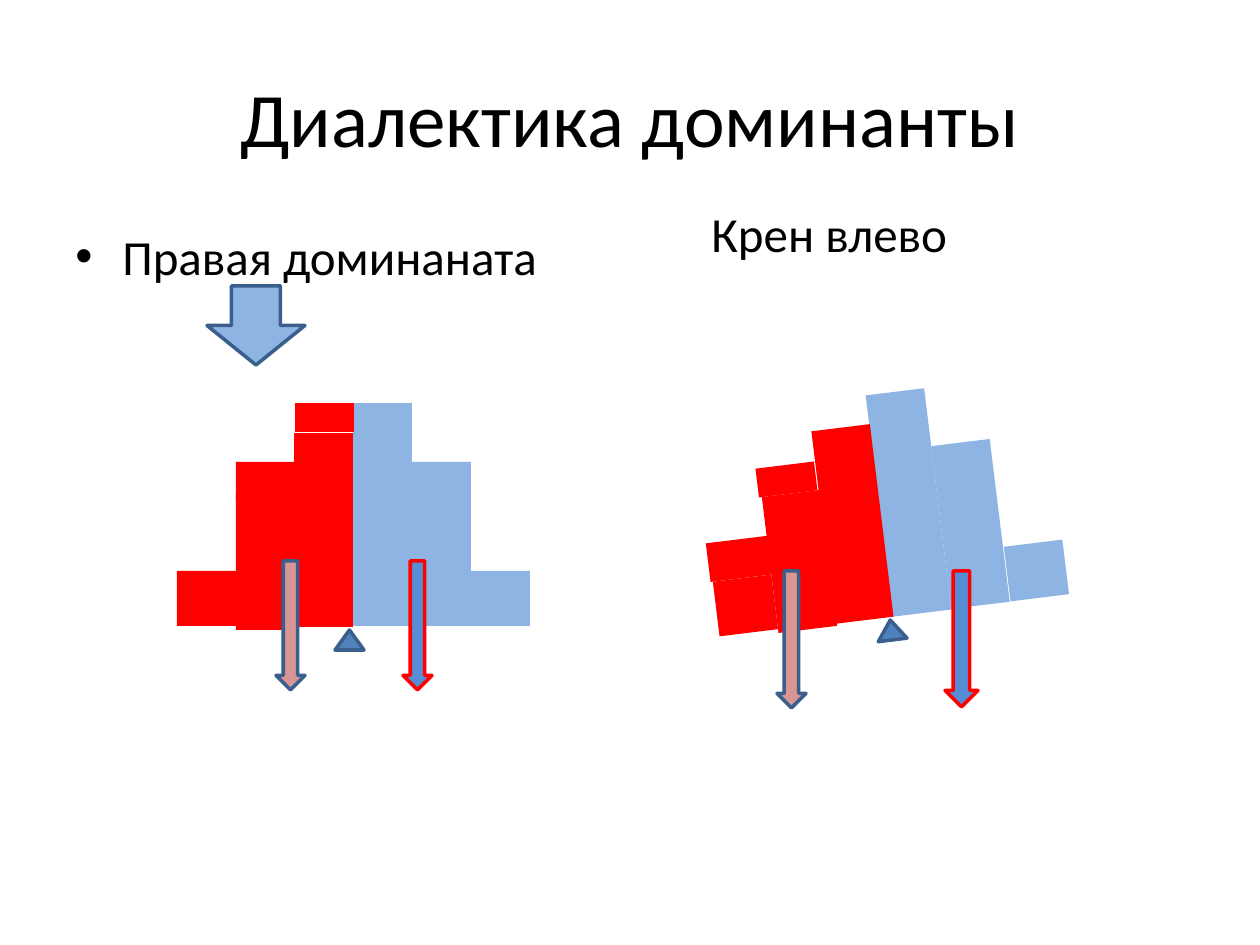
from lxml.etree import SubElement
from pptx import Presentation
from pptx.dml.color import RGBColor
from pptx.enum.shapes import MSO_SHAPE
from pptx.enum.text import MSO_ANCHOR, PP_ALIGN
from pptx.oxml.ns import qn
from pptx.util import Pt

PX = 914400 // 126
BLACK = RGBColor(0x00, 0x00, 0x00)
RED = RGBColor(0xFF, 0x00, 0x00)
LIGHT_BLUE = RGBColor(0x8E, 0xB4, 0xE3)
BLUE = RGBColor(0x55, 0x8E, 0xD5)
PINK = RGBColor(0xD9, 0x96, 0x94)
PIVOT_BLUE = RGBColor(0x4F, 0x81, 0xBD)
OUTLINE = RGBColor(0x3A, 0x5F, 0x8C)

TITLE = "Диалектика доминанты"
LEFT_CAPTION = "Правая доминаната"
RIGHT_CAPTION = "Крен влево"
TILT = -7

BLOCKS = [
    (LIGHT_BLUE, (59, 223), (353, 403), (879, 391)),
    (LIGHT_BLUE, (59, 164), (412, 462), (941, 442)),
    (LIGHT_BLUE, (59, 55), (471, 571), (1007, 543)),
    (RED, (59, 194), (294, 433), (823, 427)),
    (RED, (59, 137), (236, 493), (770, 493)),
    (RED, (59, 55), (177, 571), (716, 578)),
    (RED, (69, 39), (236, 462), (708, 539)),
    (RED, (59, 29), (295, 403), (757, 465)),
]
LEVEL_ARROWS = [
    (BLUE, RED, (403, 561, 29, 129)),
    (PINK, OUTLINE, (276, 561, 29, 129)),
]
TILTED_ARROWS = [
    (BLUE, RED, (945, 571, 33, 136)),
    (PINK, OUTLINE, (777, 571, 29, 137)),
]
LEVEL_PIVOT = (335, 630, 29, 20)
TILTED_PIVOT = (877, 620, 29, 20)
PRESSURE_ARROW = (LIGHT_BLUE, OUTLINE, (207, 286, 98, 79))


def to_emu(box):
    return [value * PX for value in box]


def add_figure(shapes, kind, box, fill, outline=None, rotation=0):
    shape = shapes.add_shape(kind, *to_emu(box))
    shape.shadow.inherit = False
    shape.rotation = rotation
    shape.fill.solid()
    shape.fill.fore_color.rgb = fill
    if outline is None:
        shape.line.fill.background()
    else:
        shape.line.color.rgb = outline
        shape.line.width = Pt(2)


def add_arrow(shapes, fill, outline, box):
    add_figure(shapes, MSO_SHAPE.DOWN_ARROW, box, fill, outline)


def add_balance(shapes, side, rotation, arrows, pivot):
    for fill, size, *positions in BLOCKS:
        box = positions[side] + size
        add_figure(shapes, MSO_SHAPE.RECTANGLE, box, fill, rotation=rotation)
    for arrow in arrows:
        add_arrow(shapes, *arrow)
    add_figure(shapes, MSO_SHAPE.ISOSCELES_TRIANGLE, pivot, PIVOT_BLUE, OUTLINE, rotation)


def add_text(shapes, text, box, size, alignment=PP_ALIGN.LEFT, anchor=MSO_ANCHOR.TOP):
    frame = shapes.add_textbox(*to_emu(box)).text_frame
    frame.word_wrap = True
    frame.vertical_anchor = anchor
    paragraph = frame.paragraphs[0]
    paragraph.alignment = alignment
    run = paragraph.add_run()
    run.text = text
    for name, value in {"name": "Calibri", "size": Pt(size)}.items():
        setattr(run.font, name, value)
    run.font.color.rgb = BLACK
    return paragraph


def add_bullet(paragraph, indent):
    properties = paragraph._p.get_or_add_pPr()
    for name, value in {"marL": indent * PX, "indent": -indent * PX}.items():
        properties.set(name, str(value))
    SubElement(properties, qn("a:buFont"), typeface="Arial")
    SubElement(properties, qn("a:buChar"), char="•")


def main():
    presentation = Presentation()
    presentation.slide_width, presentation.slide_height = to_emu((1260, 945))
    shapes = presentation.slides.add_slide(presentation.slide_layouts[6]).shapes

    add_text(shapes, TITLE, (63, 38, 1134, 157), 44, PP_ALIGN.CENTER, MSO_ANCHOR.MIDDLE)
    add_bullet(add_text(shapes, LEFT_CAPTION, (63, 220, 557, 624), 28), 47)
    add_balance(shapes, 0, 0, LEVEL_ARROWS, LEVEL_PIVOT)
    tilted_group = shapes.add_group_shape()
    add_balance(tilted_group.shapes, 1, TILT, TILTED_ARROWS, TILTED_PIVOT)
    add_text(shapes, RIGHT_CAPTION, (699, 197, 374, 72), 28)
    add_arrow(shapes, *PRESSURE_ARROW)

    presentation.save("out.pptx")


if __name__ == "__main__":
    main()
